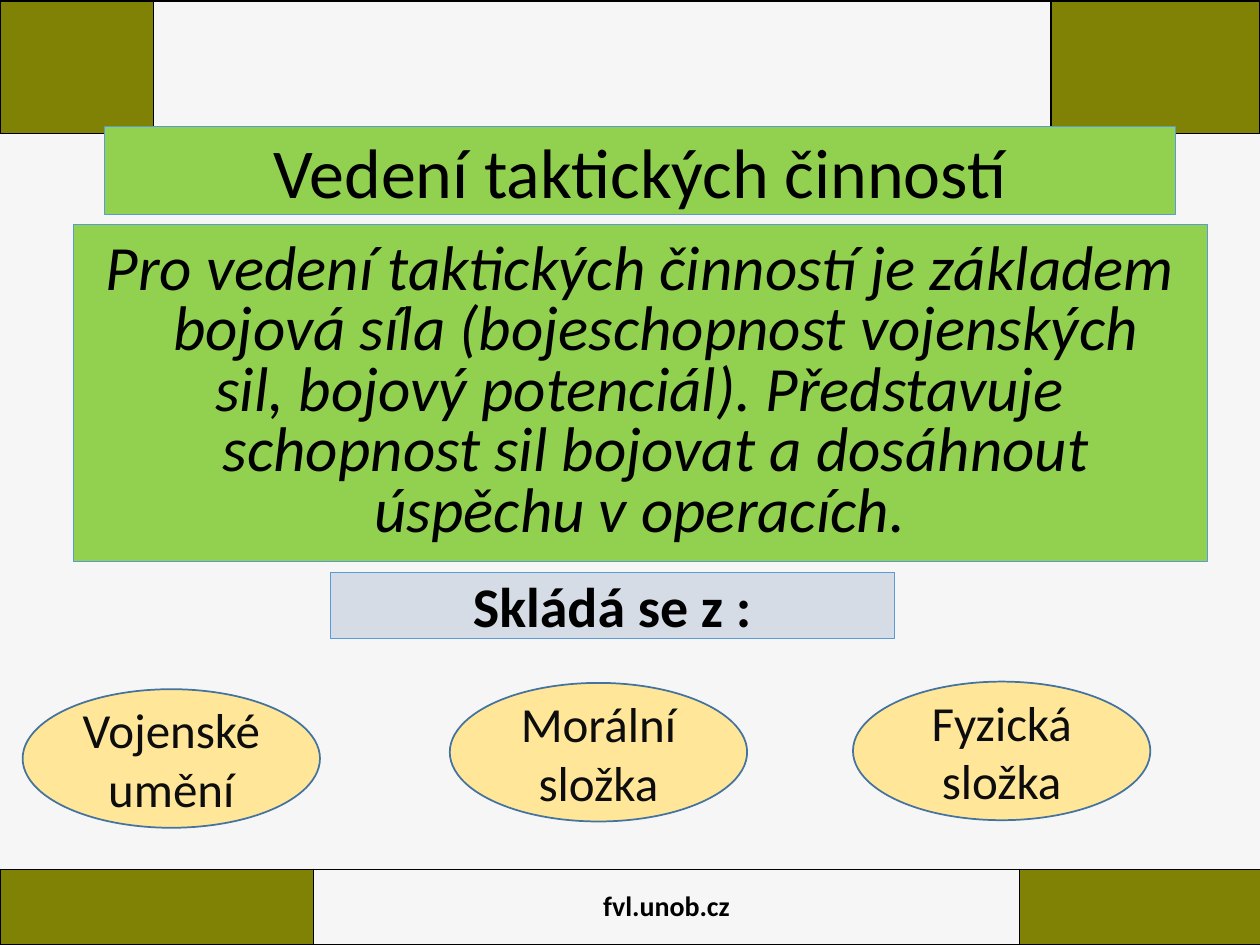
from dataclasses import dataclass

from lxml import etree
from pptx import Presentation
from pptx.dml.color import RGBColor
from pptx.enum.shapes import MSO_SHAPE
from pptx.enum.text import MSO_ANCHOR, MSO_AUTO_SIZE, PP_ALIGN
from pptx.oxml.ns import qn
from pptx.util import Emu, Inches, Pt

RECTANGLE, OVAL = MSO_SHAPE.RECTANGLE, MSO_SHAPE.OVAL
CENTER, MIDDLE = PP_ALIGN.CENTER, MSO_ANCHOR.MIDDLE
NO_AUTOFIT = MSO_AUTO_SIZE.NONE
FONT = "Calibri"
TITLE_ONLY = 5

COLORS = {
    "background": "F6F6F6",
    "olive": "808206",
    "green": "92D050",
    "gray": "D6DCE5",
    "sand": "FFE699",
    "blue": "5B9BD5",
    "navy": "43739E",
    "black": "000000",
    "ink": "0D0D0D",
}

# Grid of 100 columns and 75 rows over the slide
WIDTH, HEIGHT = Inches(10), Inches(7.5)
COLUMN, ROW = WIDTH / 100, HEIGHT / 75


@dataclass
class Place:
    left: float
    top: float
    width: float
    height: float

    def lengths(self) -> tuple:
        return (Emu(round(self.left * COLUMN)), Emu(round(self.top * ROW)),
                Emu(round(self.width * COLUMN)), Emu(round(self.height * ROW)))


@dataclass
class Panel:
    place: Place
    lines: list[str]
    fill: str
    font: dict
    outline: str = "blue"
    outline_width: float = 0.5
    ink: str = "black"
    hanging: float = 0
    spacing: float = 1.0


@dataclass
class Band:
    top: float
    height: float
    columns: tuple[float, float, float]
    label: str = ""


def rgb(name: str) -> RGBColor:
    return RGBColor.from_string(COLORS[name])


def write(frame, lines: list[str], font: dict, ink: str,
          hanging: float = 0, spacing: float = 1.0) -> None:
    frame.text = "\n".join(lines)
    for paragraph in frame.paragraphs:
        paragraph.alignment = CENTER
        paragraph.line_spacing = spacing
        paragraph.space_before = Pt(0)
        if hanging:
            properties = paragraph._p.get_or_add_pPr()
            properties.set("marL", str(Inches(hanging)))
            properties.set("indent", str(-Inches(hanging)))
        for key, value in {"name": FONT, **font}.items():
            setattr(paragraph.font, key, value)
        paragraph.font.color.rgb = rgb(ink)


def format_panel(shape, panel: Panel) -> None:
    shape.left, shape.top, shape.width, shape.height = panel.place.lengths()
    shape.fill.solid()
    shape.fill.fore_color.rgb = rgb(panel.fill)
    shape.line.color.rgb = rgb(panel.outline)
    shape.line.width = Pt(panel.outline_width)
    frame = shape.text_frame
    settings = {"word_wrap": True, "auto_size": NO_AUTOFIT, "vertical_anchor": MIDDLE}
    for key, value in settings.items():
        setattr(frame, key, value)
    write(frame, panel.lines, panel.font, panel.ink, panel.hanging, panel.spacing)


def add_panel(shapes, kind, panel: Panel) -> None:
    shape = shapes.add_shape(kind, *panel.place.lengths())
    shape.shadow.inherit = False
    format_panel(shape, panel)


def border_cell(cell) -> None:
    properties = cell._tc.get_or_add_tcPr()
    for side in ("a:lnL", "a:lnR", "a:lnT", "a:lnB"):
        line = etree.SubElement(properties, qn(side), w=str(Pt(1)))
        fill = etree.SubElement(line, qn("a:solidFill"))
        etree.SubElement(fill, qn("a:srgbClr"), val=COLORS["black"])


def add_band(shapes, band: Band) -> None:
    place = Place(0, band.top, sum(band.columns), band.height)
    table = shapes.add_table(1, len(band.columns), *place.lengths()).table
    table.first_row = table.horz_banding = False
    for index, width in enumerate(band.columns):
        table.columns[index].width = Emu(round(width * COLUMN))
        cell = table.cell(0, index)
        cell.vertical_anchor = MIDDLE
        border_cell(cell)
        if index == 1:
            cell.fill.background()
        else:
            cell.fill.solid()
            cell.fill.fore_color.rgb = rgb("olive")
    if band.label:
        write(table.cell(0, 1).text_frame, [band.label],
              {"size": Pt(16), "bold": True}, "black")


BANDS = [
    Band(69, 6, (24.9, 56, 19.2), "fvl.unob.cz"),
    Band(0.1, 10.5, (12.2, 71.2, 16.6)),
]
DEFINITION = Panel(
    Place(5.8, 17.8, 90, 26.8),
    ["Pro vedení taktických činností je základem bojová síla (bojeschopnost vojenských",
     "sil, bojový potenciál). Představuje schopnost sil bojovat a dosáhnout",
     "úspěchu v operacích."],
    "green", {"size": Pt(36), "italic": True}, hanging=0.25, spacing=0.8)
HEADING = Panel(Place(8.3, 10, 85, 7), ["Vedení taktických činností"],
                "green", {"size": Pt(40)})
LEAD_IN = Panel(Place(26.2, 45.4, 44.8, 5.3), ["Skládá se z :"],
                "gray", {"size": Pt(32), "bold": True})
COMPONENTS = [
    ("Vojenské umění", 1.8, 54.7),
    ("Morální složka", 35.7, 54.2),
    ("Fyzická složka", 67.7, 54.1),
]


def main() -> None:
    presentation = Presentation()
    presentation.slide_width, presentation.slide_height = WIDTH, HEIGHT
    slide = presentation.slides.add_slide(presentation.slide_layouts[TITLE_ONLY])
    slide.background.fill.solid()
    slide.background.fill.fore_color.rgb = rgb("background")
    shapes = slide.shapes

    # Olive bands at the foot and the head
    for band in BANDS:
        add_band(shapes, band)

    # Definition, then the title in front of the head band
    add_panel(shapes, RECTANGLE, DEFINITION)
    title = shapes.title
    title.element.getparent().append(title.element)
    format_panel(title, HEADING)

    # Components of combat power
    add_panel(shapes, RECTANGLE, LEAD_IN)
    components = shapes.add_group_shape().shapes
    for name, left, top in COMPONENTS:
        add_panel(components, OVAL, Panel(
            Place(left, top, 23.6, 11), [name], "sand", {"size": Pt(28)},
            outline="navy", outline_width=1, ink="ink"))

    presentation.save("out.pptx")


if __name__ == "__main__":
    main()
